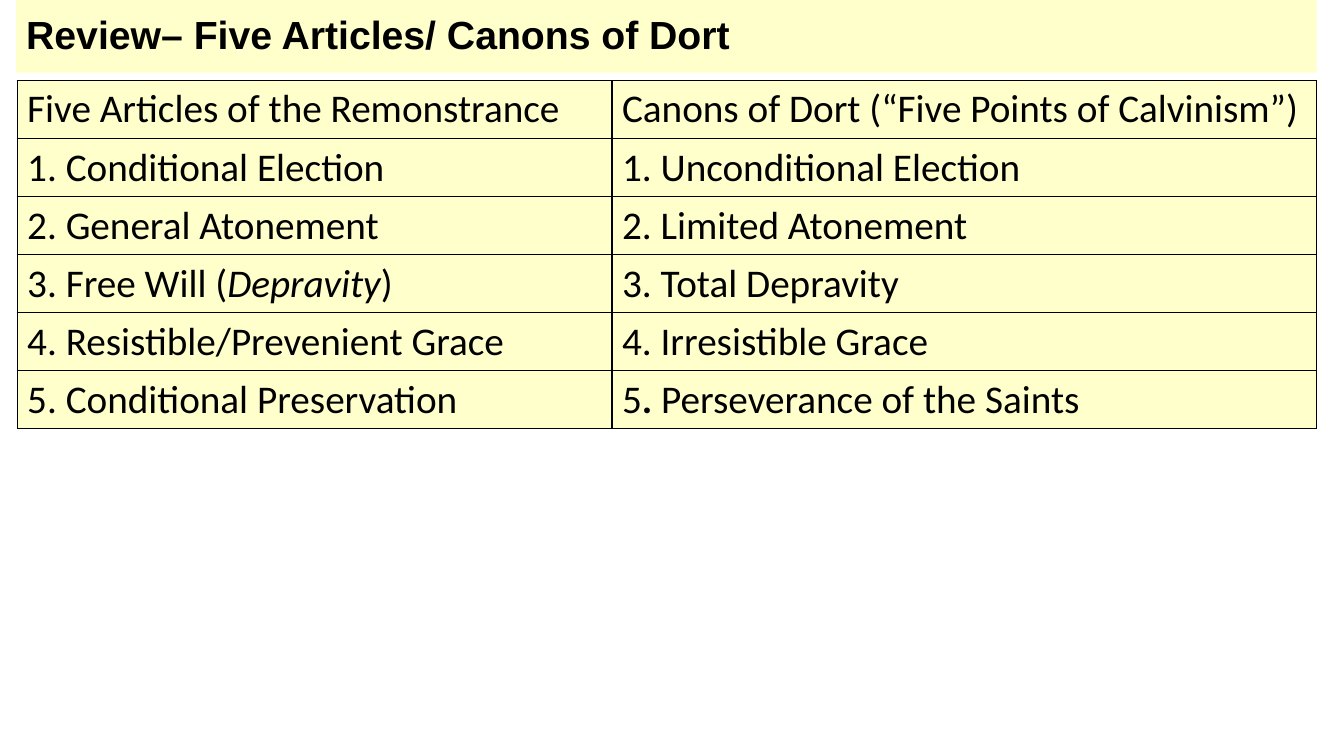
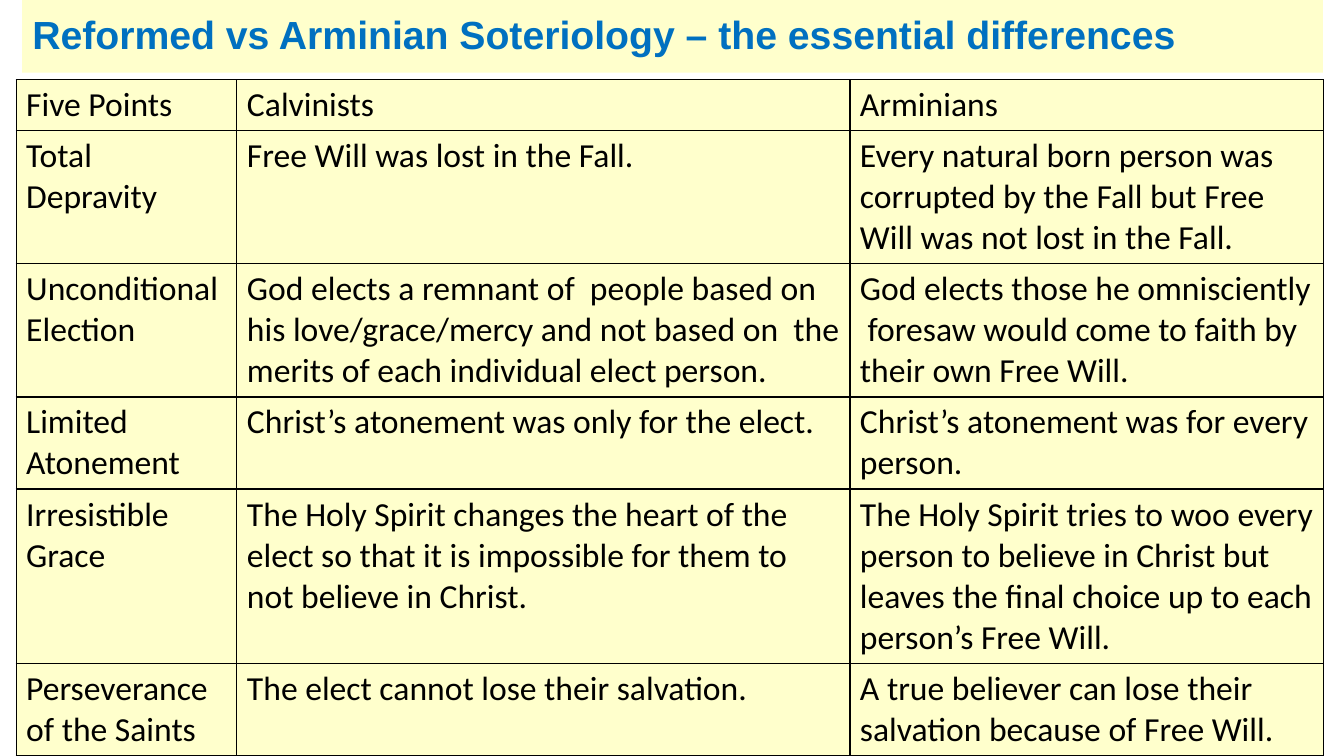
from dataclasses import dataclass

from lxml.etree import SubElement
from pptx import Presentation
from pptx.dml.color import RGBColor
from pptx.enum.text import MSO_ANCHOR, MSO_AUTO_SIZE, PP_ALIGN
from pptx.oxml.ns import qn
from pptx.util import Inches, Pt


@dataclass(frozen=True)
class Theme:
    cream: RGBColor = RGBColor(0xFF, 0xFF, 0xCC)
    black: RGBColor = RGBColor(0, 0, 0)
    blue: RGBColor = RGBColor(0x00, 0x70, 0xC0)
    title_font: str = "Arial"
    table_font: str = "Calibri"
    title_size: int = 28
    large_size: int = 28
    small_size: int = 24
    line_factor: float = 1.22
    cell_padding: float = 0.1
    border_width: int = 1


THEME = Theme()

ARTICLES_AND_CANONS = [
    ["Five Articles of the Remonstrance", "Canons of Dort (“Five Points of Calvinism”)"],
    ["1. Conditional Election", "1. Unconditional Election"],
    ["2. General Atonement", "2. Limited Atonement"],
    [[("3. Free Will (", {}), ("Depravity", {"italic": True}), (")", {})], "3. Total Depravity"],
    ["4. Resistible/Prevenient Grace", "4. Irresistible Grace"],
    [
        "5. Conditional Preservation",
        [("5", {}), (". ", {"bold": True}), ("Perseverance of the Saints", {})],
    ],
]

DIFFERENCES = [
    ["Five Points", "Calvinists", "Arminians"],
    [
        "Total Depravity",
        "Free Will was lost in the Fall.",
        "Every natural born person was corrupted by the Fall but Free Will was not lost in the Fall.",
    ],
    [
        "Unconditional Election",
        "God elects a remnant of  people based on his love/grace/mercy and not based on  the "
        "merits of each individual elect person.",
        "God elects those he omnisciently  foresaw would come to faith by their own Free Will.",
    ],
    [
        "Limited Atonement",
        "Christ’s atonement was only for the elect.",
        "Christ’s atonement was for every person.",
    ],
    [
        "Irresistible Grace",
        "The Holy Spirit changes the heart of the elect so that it is impossible for them to "
        "not believe in Christ.",
        "The Holy Spirit tries to woo every person to believe in Christ but leaves the final "
        "choice up to each person’s Free Will.",
    ],
    [
        "Perseverance of the Saints",
        "The elect cannot lose their salvation.",
        "A true believer can lose their salvation because of Free Will.",
    ],
]


def add_run(paragraph, text, color, **font_values):
    run = paragraph.add_run()
    run.text = text
    run.font.color.rgb = color
    for attribute, value in font_values.items():
        setattr(run.font, attribute, value)


def set_title(slide, text, left, color):
    title = slide.shapes.title
    bounds = {"left": left, "top": 0, "width": 12.9, "height": 0.72}
    for attribute, value in bounds.items():
        setattr(title, attribute, Inches(value))
    title.fill.solid()
    title.fill.fore_color.rgb = THEME.cream
    frame = title.text_frame
    frame.word_wrap = True
    frame.auto_size = MSO_AUTO_SIZE.NONE
    frame.vertical_anchor = MSO_ANCHOR.MIDDLE
    heading = frame.paragraphs[0]
    heading.alignment = PP_ALIGN.LEFT
    heading.line_spacing = 0.9
    add_run(heading, text, color, name=THEME.title_font, size=Pt(THEME.title_size), bold=True)


def add_borders(cell):
    properties = cell._tc.get_or_add_tcPr()
    for side in ("a:lnL", "a:lnR", "a:lnT", "a:lnB"):
        border = SubElement(properties, qn(side), w=str(Pt(THEME.border_width)))
        fill = SubElement(border, qn("a:solidFill"))
        SubElement(fill, qn("a:srgbClr"), val=str(THEME.black))


def fill_cell(cell, content, size):
    add_borders(cell)
    cell.fill.solid()
    cell.fill.fore_color.rgb = THEME.cream
    parts = [(content, {})] if isinstance(content, str) else content
    for text, emphasis in parts:
        font_values = {"name": THEME.table_font, "size": Pt(size), "bold": False} | emphasis
        add_run(cell.text_frame.paragraphs[0], text, THEME.black, **font_values)


def add_comparison(slide, rows, left, top, widths, line_counts, size):
    line_height = size * THEME.line_factor / 72
    heights = [THEME.cell_padding + count * line_height for count in line_counts]
    table = slide.shapes.add_table(
        len(rows), len(widths), Inches(left), Inches(top), Inches(sum(widths)), Inches(sum(heights))
    ).table
    table.first_row = False
    table.horz_banding = False
    for column, width in zip(table.columns, widths):
        column.width = Inches(width)
    for table_row, height, contents in zip(table.rows, heights, rows):
        table_row.height = Inches(height)
        for cell, content in zip(table_row.cells, contents):
            fill_cell(cell, content, size)


def main():
    deck = Presentation()
    deck.slide_width = Inches(13.33)
    deck.slide_height = Inches(7.5)
    title_only = deck.slide_layouts[5]

    review = deck.slides.add_slide(title_only)
    set_title(review, "Review– Five Articles/ Canons of Dort", 0.16, THEME.black)
    add_comparison(
        review, ARTICLES_AND_CANONS, 0.17, 0.8, [5.9, 6.99], [1] * 6, THEME.large_size
    )

    differences = deck.slides.add_slide(title_only)
    set_title(
        differences,
        "Reformed vs Arminian Soteriology – the essential differences",
        0.22,
        THEME.blue,
    )
    add_comparison(
        differences, DIFFERENCES, 0.16, 0.79, [2.19, 6.08, 4.7], [1, 3, 3, 2, 4, 2], THEME.small_size
    )

    deck.save("out.pptx")


if __name__ == "__main__":
    main()
